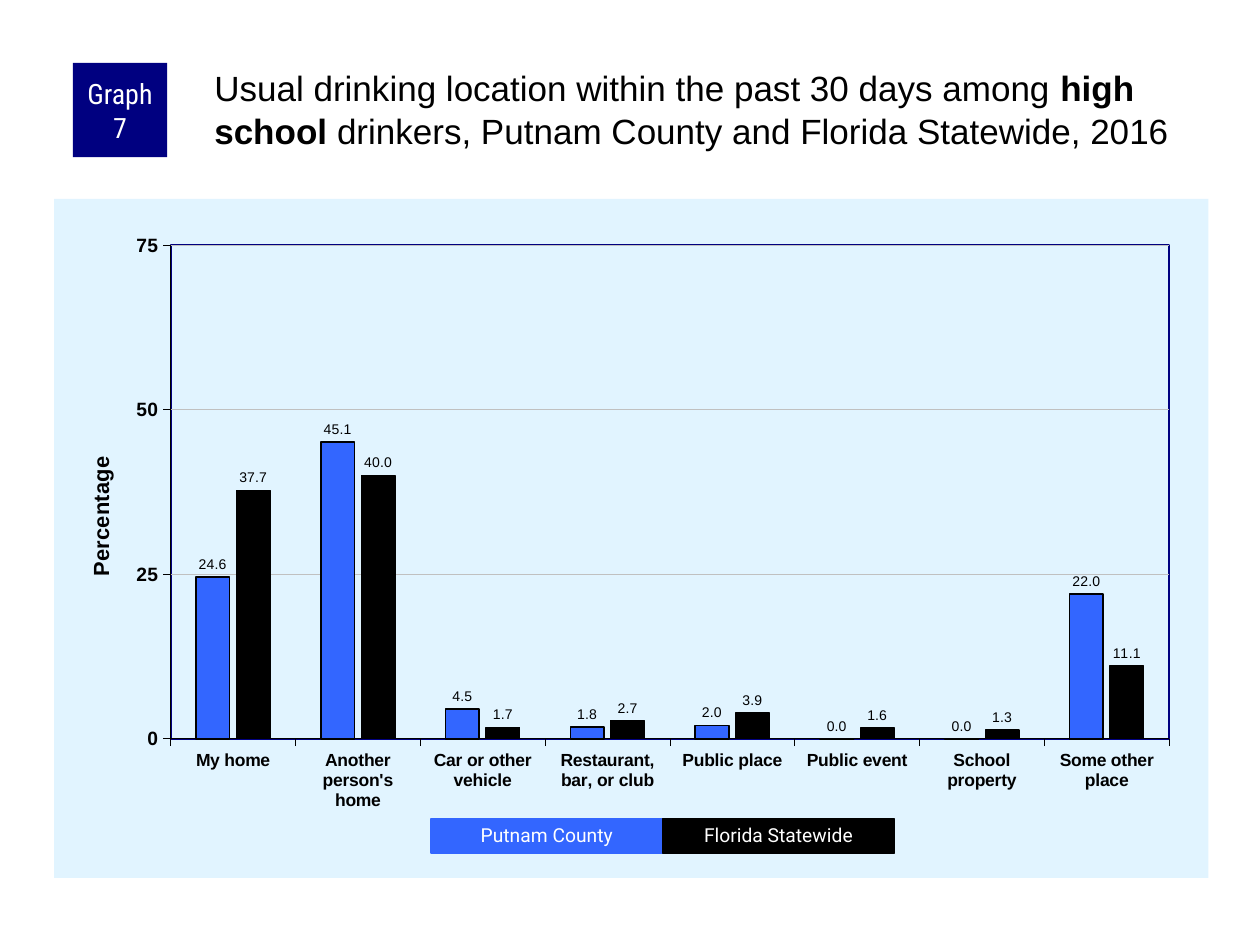
from pptx import Presentation
from pptx.chart.data import CategoryChartData
from pptx.dml.color import RGBColor
from pptx.enum.chart import XL_CHART_TYPE as ChartType, XL_LABEL_POSITION as LabelPosition
from pptx.enum.chart import XL_TICK_MARK as TickMark
from pptx.enum.shapes import MSO_SHAPE as ShapeType
from pptx.enum.text import MSO_ANCHOR as Anchor, PP_ALIGN as Align
from pptx.oxml import parse_xml
from pptx.oxml.ns import nsdecls, qn
from pptx.util import Cm, Pt

BLACK = RGBColor(0x00, 0x00, 0x00)
WHITE = RGBColor(0xFF, 0xFF, 0xFF)
NAVY = RGBColor(0x00, 0x00, 0x80)
BLUE = RGBColor(0x33, 0x66, 0xFF)
PALE_BLUE = RGBColor(0xE1, 0xF4, 0xFF)
GREY = RGBColor(0xC0, 0xC0, 0xC0)

LOCATIONS = ["My home", "Another person's home", "Car or other vehicle",
             "Restaurant, bar, or club", "Public place", "Public event",
             "School property", "Some other place"]
# Name, values, colour, outline width, label format
REGIONS = [
    ("Putnam County", [24.6, 45.1, 4.5, 1.8, 2.0, 0.0, 0.0, 22.0], BLUE, 1, "0.0"),
    ("Florida Statewide", [37.7, 40.0, 1.7, 2.7, 3.9, 1.6, 1.3, 11.1], BLACK, 0.75, "#,##0.0"),
]


def set_font(font, size, color, name="Arial", bold=False):
    font.size, font.name, font.bold = Pt(size), name, bold
    font.color.rgb = color


def set_line(line, color, width):
    line.color.rgb = color
    line.width = Pt(width)


def add_title(slide, runs):
    title = slide.shapes.title
    title.left, title.top, title.width, title.height = Cm(4.24), Cm(1.27), Cm(20.12), Cm(2.11)
    frame = title.text_frame
    frame.word_wrap = True
    frame.vertical_anchor = Anchor.TOP
    frame.margin_left = frame.margin_top = Cm(0.08)
    frame.margin_right = frame.margin_bottom = 0
    paragraph = frame.paragraphs[0]
    paragraph.alignment = Align.LEFT
    set_font(paragraph.font, 20, BLACK)
    for text, bold in runs:
        run = paragraph.add_run()
        run.text = text
        run.font.bold = bold


def add_box(slide, text, left, top, width, height, fill, size, font_name, outlined=False):
    shape = slide.shapes.add_shape(ShapeType.RECTANGLE, left, top, width, height)
    shape.shadow.inherit = False
    shape.fill.solid()
    shape.fill.fore_color.rgb = fill
    if outlined:
        set_line(shape.line, fill, 0.75)
    else:
        shape.line.fill.background()
    frame = shape.text_frame
    frame.word_wrap = True
    frame.vertical_anchor = Anchor.MIDDLE
    frame.margin_left = frame.margin_right = Cm(0.13)
    frame.margin_top = frame.margin_bottom = 0
    paragraph = frame.paragraphs[0]
    paragraph.text = text
    paragraph.alignment = Align.CENTER
    set_font(paragraph.font, size, WHITE, font_name)
    return paragraph


def manual_layout(x, y, size=None):
    """Chart layout in fractions of the chart area."""
    values = [("xMode", "edge"), ("yMode", "edge"), ("x", x), ("y", y)]
    if size:
        values.insert(0, ("layoutTarget", "inner"))
        values += [("w", size[0]), ("h", size[1])]
    parts = "".join(f'<c:{tag} val="{value}"/>' for tag, value in values)
    return parse_xml(f'<c:layout {nsdecls("c")}><c:manualLayout>{parts}'
                     '</c:manualLayout></c:layout>')


def area_format(fill, line):
    return parse_xml(f'<c:spPr {nsdecls("c", "a")}>{fill}<a:ln w="12700">{line}</a:ln></c:spPr>')


def solid(color):
    return f'<a:solidFill><a:srgbClr val="{color}"/></a:solidFill>'


def style_axis(axis, size):
    axis.major_tick_mark = TickMark.OUTSIDE
    axis.minor_tick_mark = TickMark.NONE
    set_font(axis.tick_labels.font, size, BLACK, bold=True)
    set_line(axis.format.line, BLACK, 0.25)


def style_areas(chart):
    chart_element = chart.element.find(qn("c:chart"))
    chart_element.addnext(area_format(solid(PALE_BLUE), "<a:noFill/>"))
    plot_area = chart_element.find(qn("c:plotArea"))
    for layout in plot_area.findall(qn("c:layout")):
        plot_area.remove(layout)
    plot_area.insert(0, manual_layout(0.101, 0.068, (0.865, 0.727)))
    plot_area.append(area_format("<a:noFill/>", solid(NAVY)))


def style_value_axis(axis):
    style_axis(axis, 11)
    axis.minimum_scale, axis.maximum_scale, axis.major_unit = 0, 75, 25
    axis.tick_labels.number_format = "0"
    axis.tick_labels.number_format_is_linked = False
    set_line(axis.major_gridlines.format.line, GREY, 0.25)
    title = axis.axis_title
    paragraph = title.text_frame.paragraphs[0]
    paragraph.text = "Percentage"
    set_font(paragraph.font, 12.5, BLACK, bold=True)
    element = title.text_frame._txBody.getparent().getparent()
    for layout in element.findall(qn("c:layout")):
        element.remove(layout)
    element.find(qn("c:tx")).addnext(manual_layout(0.025, 0.373))


def add_column_chart(slide):
    data = CategoryChartData(number_format="0.0")
    data.categories = LOCATIONS
    for name, values, *_ in REGIONS:
        data.add_series(name, values)
    chart = slide.shapes.add_chart(ChartType.COLUMN_CLUSTERED, Cm(1.09), Cm(4.01),
                                   Cm(23.27), Cm(13.69), data).chart
    chart.has_legend = chart.has_title = False
    set_font(chart.font, 11.5, BLACK)
    style_areas(chart)
    style_axis(chart.category_axis, 10)
    style_value_axis(chart.value_axis)

    # Columns and their labels
    plot = chart.plots[0]
    plot.gap_width, plot.overlap, plot.vary_by_categories = 150, -20, False
    for series, (_, _, color, width, number_format) in zip(plot.series, REGIONS):
        series.format.fill.solid()
        series.format.fill.fore_color.rgb = color
        set_line(series.format.line, BLACK, width)
        labels = series.data_labels
        labels.show_value = True
        labels.position = LabelPosition.OUTSIDE_END
        labels.number_format = number_format
        labels.number_format_is_linked = False
        set_font(labels.font, 8, BLACK)


def add_legend(slide):
    width = 4.67
    for index, (name, _, color, *_) in enumerate(REGIONS):
        paragraph = add_box(slide, name, Cm(8.69 + index * width), Cm(16.51), Cm(width),
                            Cm(0.69), color, 11, "Roboto", outlined=True)
        paragraph.line_spacing = 0.9


def main():
    presentation = Presentation()
    presentation.slide_width, presentation.slide_height = Cm(25.4), Cm(19.05)
    slide = presentation.slides.add_slide(presentation.slide_layouts[5])
    add_column_chart(slide)
    add_box(slide, "Graph 7", Cm(1.47), Cm(1.27), Cm(1.9), Cm(1.9), NAVY, 16, "Roboto Condensed")
    add_title(slide, [("Usual drinking location within the past 30 days among ", False),
                      ("high school", True),
                      (" drinkers, Putnam County and Florida Statewide, 2016", False)])
    add_legend(slide)
    presentation.save("out.pptx")


if __name__ == "__main__":
    main()
